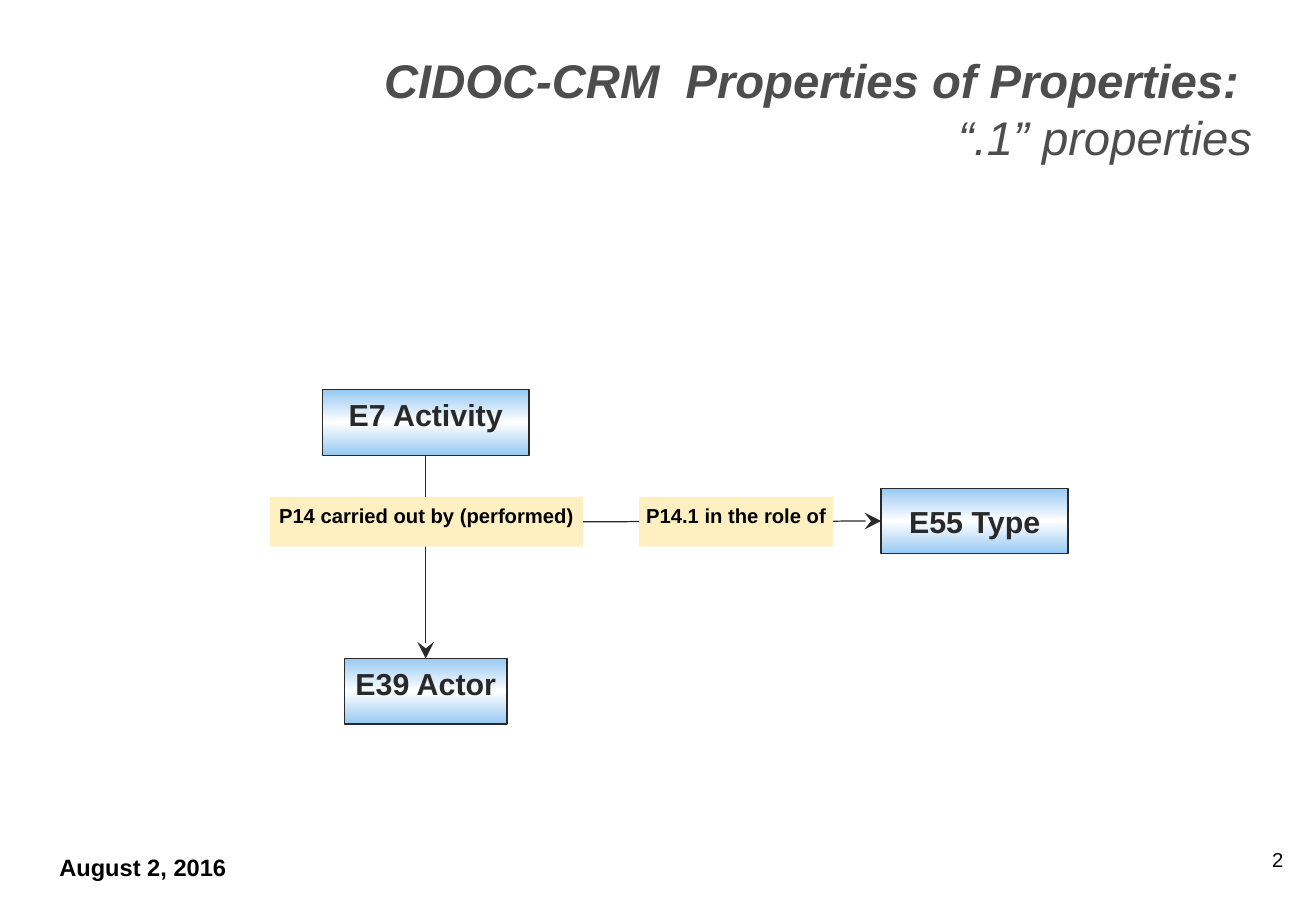
from copy import deepcopy
from dataclasses import dataclass

from pptx import Presentation
from pptx.dml.color import RGBColor
from pptx.enum.shapes import MSO_CONNECTOR, MSO_SHAPE
from pptx.enum.text import MSO_ANCHOR, PP_ALIGN
from pptx.oxml.ns import qn
from pptx.oxml.xmlchemy import OxmlElement
from pptx.util import Cm, Pt

RECTANGLE = MSO_SHAPE.RECTANGLE
STRAIGHT = MSO_CONNECTOR.STRAIGHT
TOP, MIDDLE, BOTTOM = MSO_ANCHOR.TOP, MSO_ANCHOR.MIDDLE, MSO_ANCHOR.BOTTOM
LEFT, CENTER, RIGHT = PP_ALIGN.LEFT, PP_ALIGN.CENTER, PP_ALIGN.RIGHT
SITE_TOP, SITE_LEFT, SITE_BOTTOM, SITE_RIGHT = range(4)


@dataclass(frozen=True)
class Theme:
    font: str = "Arial"
    title: RGBColor = RGBColor(0x4D, 0x4D, 0x4D)
    ink: RGBColor = RGBColor(0x29, 0x29, 0x29)
    black: RGBColor = RGBColor(0, 0, 0)
    blue: RGBColor = RGBColor(0x97, 0xC9, 0xF3)
    white: RGBColor = RGBColor(0xFF, 0xFF, 0xFF)
    cream: RGBColor = RGBColor(0xFF, 0xF0, 0xC2)
    title_size: Pt = Pt(28)
    entity_size: Pt = Pt(18)
    date_size: Pt = Pt(14)
    small_size: Pt = Pt(12)
    line_width: Pt = Pt(0.75)


THEME = Theme()


def place(shape, box):
    shape.left, shape.top, shape.width, shape.height = (Cm(value) for value in box)


def write(shape, lines, size, color, align, anchor=TOP, bold=True, wrap=False, side=0.25):
    frame = shape.text_frame
    frame.text = "\n".join(lines)
    frame.word_wrap = wrap
    frame.vertical_anchor = anchor
    frame.margin_left = frame.margin_right = Cm(side)
    frame.margin_top = frame.margin_bottom = Cm(0.13)
    for para in frame.paragraphs:
        para.alignment = align
        para.font.name = THEME.font
        para.font.size = size
        para.font.bold = bold
        para.font.color.rgb = color


def add_title(page, box):
    title = page.shapes.title
    place(title, box)
    lines = ["CIDOC-CRM  Properties of Properties: ", "“.1” properties"]
    write(title, lines, THEME.title_size, THEME.title, RIGHT, BOTTOM, wrap=True)
    for para in title.text_frame.paragraphs:
        para.font.italic = True
    title.text_frame.paragraphs[1].font.bold = False


def add_rectangle(page, box):
    shape = page.shapes.add_shape(RECTANGLE, *(Cm(value) for value in box))
    shape.shadow.inherit = False
    return shape


def add_entity(page, box, text, anchor=TOP):
    entity = add_rectangle(page, box)
    entity.fill.gradient()
    entity.fill.gradient_angle = 90
    stops = entity._element.spPr.find(".//" + qn("a:gsLst"))
    stops.append(deepcopy(stops[0]))
    colors = (THEME.blue, THEME.white, THEME.blue)
    for index, (stop, color) in enumerate(zip(entity.fill.gradient_stops, colors)):
        stop.position = index / 2
        stop.color.rgb = color
    entity.line.color.rgb = THEME.ink
    entity.line.width = THEME.line_width
    write(entity, [text], THEME.entity_size, THEME.ink, CENTER, anchor, side=0.15)
    return entity


def add_label(page, box, text):
    label = add_rectangle(page, box)
    label.fill.solid()
    label.fill.fore_color.rgb = THEME.cream
    label.line.fill.background()
    write(label, [text], THEME.small_size, THEME.black, CENTER, side=0.05)
    return label


def add_arrow(page, source, source_site, target, target_site):
    arrow = page.shapes.add_connector(STRAIGHT, 0, 0, 0, 0)
    arrow.begin_connect(source, source_site)
    arrow.end_connect(target, target_site)
    arrow.line.color.rgb = THEME.ink
    arrow.line.width = THEME.line_width
    head = OxmlElement("a:tailEnd")
    for name, value in (("type", "stealth"), ("w", "lg"), ("len", "lg")):
        head.set(name, value)
    arrow.line._get_or_add_ln().append(head)
    arrow._element.spPr.append(OxmlElement("a:effectLst"))


def add_diagram(page, box):
    left, top, width, height = box
    entity_height, label_height = 1.37, 1.04
    label_top = top + 2.24
    axis = left + 3.26
    actor = add_entity(
        page, (axis - 1.7, top + height - entity_height, 3.4, entity_height), "E39 Actor"
    )
    role_type = add_entity(
        page, (left + width - 3.91, top + 2.06, 3.91, entity_height), "E55 Type", MIDDLE
    )
    activity = add_entity(page, (axis - 2.16, top, 4.32, entity_height), "E7 Activity")
    add_arrow(page, activity, SITE_BOTTOM, actor, SITE_TOP)
    performed = add_label(
        page, (left, label_top, 6.55, label_height), "P14 carried out by (performed)"
    )
    add_arrow(page, performed, SITE_RIGHT, role_type, SITE_LEFT)
    add_label(page, (left + 7.72, label_top, 4.06, label_height), "P14.1 in the role of")


def add_note(page, box, text, size, align, bold):
    note = page.shapes.add_textbox(0, 0, 0, 0)
    place(note, box)
    write(note, [text], size, THEME.black, align, bold=bold, wrap=align == RIGHT)


def add_footer(page, box):
    left, top, width, height = box
    add_note(page, (left, top + 0.13, 4.01, 0.86), "August 2, 2016", THEME.date_size, LEFT, True)
    add_note(page, (left + width - 1.24, top, 1.24, height), "2", THEME.small_size, RIGHT, False)


def main():
    deck = Presentation()
    deck.slide_width, deck.slide_height = Cm(27.51), Cm(19.05)
    page = deck.slides.add_slide(deck.slide_layouts.get_by_name("Title Only"))
    add_title(page, (5.36, 0.33, 21.06, 3.25))
    add_diagram(page, (5.64, 8.15, 16.69, 6.99))
    add_footer(page, (0.99, 17.58, 26.09, 1.07))
    deck.save("out.pptx")


if __name__ == "__main__":
    main()
